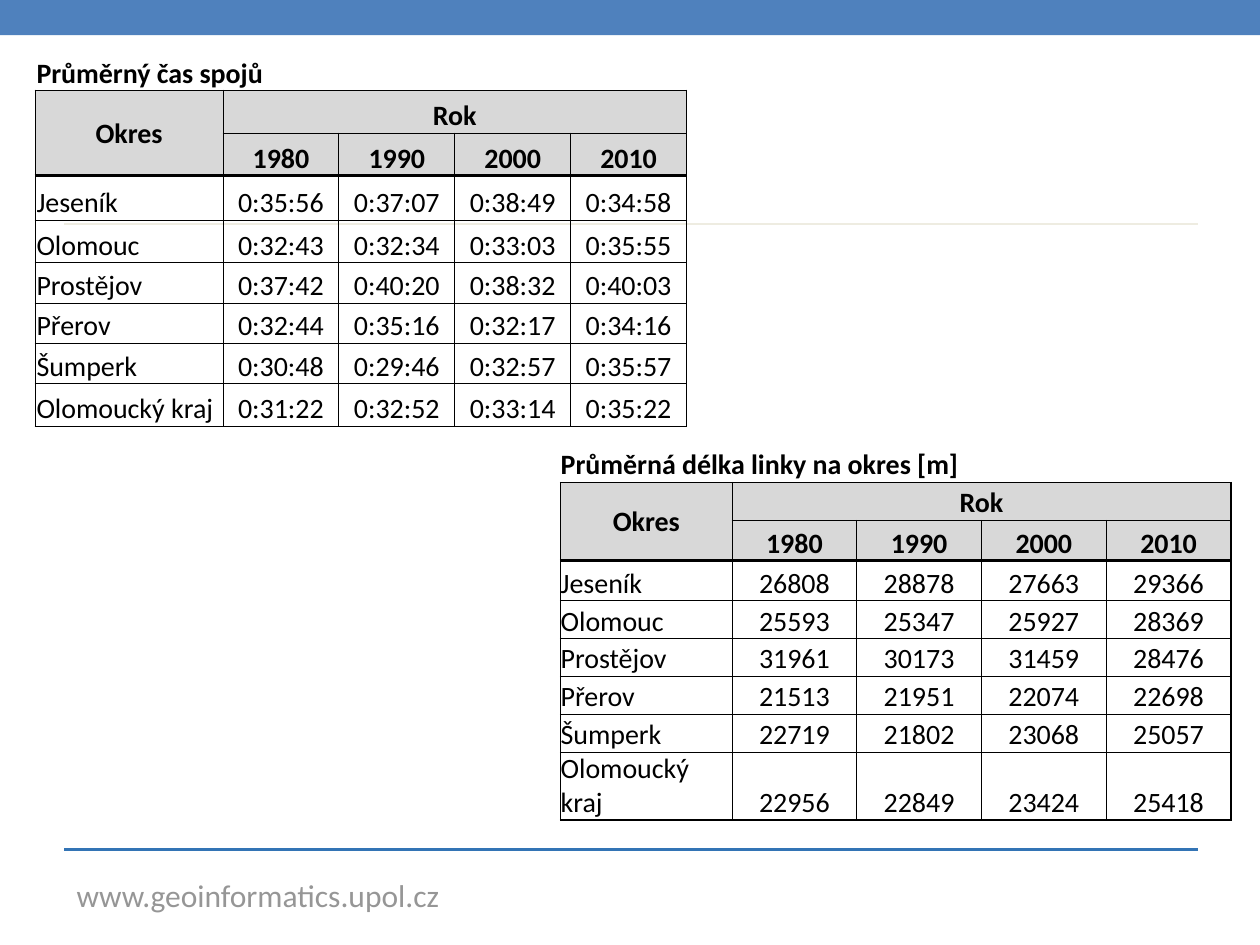
from lxml import etree
from pptx import Presentation
from pptx.dml.color import RGBColor
from pptx.enum import shapes, text
from pptx.oxml import ns
from pptx.util import Inches, Pt

BLACK = RGBColor(0x00, 0x00, 0x00)
HEAD = RGBColor(0xD8, 0xD8, 0xD8)
BAND = RGBColor(0x4F, 0x81, 0xBD)
RULE = RGBColor(0x33, 0x74, 0xB5)
PALE = RGBColor(0xEE, 0xEC, 0xE1)
GREY = RGBColor(0x96, 0x96, 0x96)
FONT = "Calibri"
SIZE = 16

FOOTER = "www.geoinformatics.upol.cz"
HEADER = [
    ["Okres", "Rok", "", "", ""],
    ["", "1980", "1990", "2000", "2010"],
]
TABLES = [
    {
        "title": "Průměrný čas spojů",
        "title_span": 2,
        "at": (0.28, 0.44),
        "cols": [1.49] + [0.92] * 4,
        "rows": [0.27, 0.34, 0.34, 0.35, 0.34, 0.32, 0.32, 0.32, 0.34],
        "inset": 0.01,
        "data": [
            ["Jeseník", "0:35:56", "0:37:07", "0:38:49", "0:34:58"],
            ["Olomouc", "0:32:43", "0:32:34", "0:33:03", "0:35:55"],
            ["Prostějov", "0:37:42", "0:40:20", "0:38:32", "0:40:03"],
            ["Přerov", "0:32:44", "0:35:16", "0:32:17", "0:34:16"],
            ["Šumperk", "0:30:48", "0:29:46", "0:32:57", "0:35:57"],
            ["Olomoucký kraj", "0:31:22", "0:32:52", "0:33:14", "0:35:22"],
        ],
    },
    {
        "title": "Průměrná délka linky na okres [m]",
        "title_span": 5,
        "at": (4.45, 3.51),
        "cols": [1.36] + [0.99] * 4,
        "rows": [0.32, 0.3, 0.32, 0.32, 0.3, 0.3, 0.3, 0.3, 0.54],
        "inset": 0,
        "data": [
            ["Jeseník", "26808", "28878", "27663", "29366"],
            ["Olomouc", "25593", "25347", "25927", "28369"],
            ["Prostějov", "31961", "30173", "31459", "28476"],
            ["Přerov", "21513", "21951", "22074", "22698"],
            ["Šumperk", "22719", "21802", "23068", "25057"],
            ["Olomoucký kraj", "22956", "22849", "23424", "25418"],
        ],
    },
]


def add_rule(s, y, color, width):
    ln = s.shapes.add_connector(shapes.MSO_CONNECTOR.STRAIGHT,
                                Inches(0.51), Inches(y), Inches(9.51), Inches(y))
    ln.line.color.rgb = color
    ln.line.width = Pt(width)
    etree.SubElement(ln._element.spPr, ns.qn("a:effectLst"))


def set_borders(cell, widths):
    tc_pr = cell._tc.get_or_add_tcPr()
    for side, width in zip("LRTB", widths):
        ln = etree.SubElement(tc_pr, ns.qn(f"a:ln{side}"))
        if width:
            ln.set("w", str(Pt(width)))
            fill = etree.SubElement(ln, ns.qn("a:solidFill"))
            etree.SubElement(fill, ns.qn("a:srgbClr"), val=str(BLACK))
        else:
            etree.SubElement(ln, ns.qn("a:noFill"))


def fill_cell(cell, value, r, c, inset):
    cell.margin_left = cell.margin_right = cell.margin_top = Inches(inset)
    cell.margin_bottom = 0
    okres = r == 1 and c == 0
    cell.vertical_anchor = text.MSO_ANCHOR.MIDDLE if okres else text.MSO_ANCHOR.BOTTOM
    p = cell.text_frame.paragraphs[0]
    p.text = value
    if r in (1, 2) or (r > 2 and c > 0):
        p.alignment = text.PP_ALIGN.CENTER
    for run in p.runs:
        run.font.name = FONT
        run.font.size = Pt(SIZE)
        run.font.bold = r < 3
        run.font.color.rgb = BLACK
    if not value:
        etree.SubElement(p._p, ns.qn("a:endParaRPr"), sz=str(SIZE * 100))


def add_data_table(s, spec_):
    cols, rows = spec_["cols"], spec_["rows"]
    n_rows, n_cols = len(rows), len(cols)
    x, y = spec_["at"]
    tbl = s.shapes.add_table(n_rows, n_cols, Inches(x), Inches(y),
                             Inches(sum(cols)), Inches(sum(rows))).table
    tbl.first_row = tbl.horz_banding = False
    for col, width in zip(tbl.columns, cols):
        col.width = Inches(width)
    for row, height in zip(tbl.rows, rows):
        row.height = Inches(height)

    tbl.cell(0, 0).merge(tbl.cell(0, spec_["title_span"] - 1))
    tbl.cell(1, 0).merge(tbl.cell(2, 0))
    tbl.cell(1, 1).merge(tbl.cell(1, n_cols - 1))

    h_lines = {0: None, 1: 1, 3: 2, n_rows: 1}
    v_lines = {0: 1, n_cols: 1}
    grid = [[spec_["title"]] + [""] * (n_cols - 1)] + HEADER + spec_["data"]
    for r, values in enumerate(grid):
        for c, value in enumerate(values):
            cell = tbl.cell(r, c)
            fill_cell(cell, value, r, c, spec_["inset"])
            right = c + cell.span_width if cell.is_merge_origin else c + 1
            bottom = r + cell.span_height if cell.is_merge_origin else r + 1
            left_w, right_w = (v_lines.get(i, 0.5) if r else None for i in (c, right))
            set_borders(cell, (left_w, right_w,
                               h_lines.get(r, 0.5), h_lines.get(bottom, 0.5)))
            if r in (1, 2):
                cell.fill.solid()
                cell.fill.fore_color.rgb = HEAD
            else:
                cell.fill.background()


def main():
    prs = Presentation()
    prs.slide_width, prs.slide_height = Inches(10), Inches(7.5)
    s = prs.slides.add_slide(prs.slide_layouts[6])

    tf = s.shapes.add_textbox(Inches(0.51), Inches(6.9), Inches(3.11), Inches(0.4)).text_frame
    tf.word_wrap = False
    tf.auto_size = text.MSO_AUTO_SIZE.SHAPE_TO_FIT_TEXT
    tf.text = FOOTER
    font = tf.paragraphs[0].runs[0].font
    font.name, font.size = FONT, Pt(18)
    font.color.rgb = GREY

    add_rule(s, 6.74, RULE, 1.5)
    band = s.shapes.add_shape(shapes.MSO_SHAPE.RECTANGLE, 0, 0, prs.slide_width, Inches(0.28))
    band.shadow.inherit = False
    band.fill.solid()
    band.fill.fore_color.rgb = BAND
    band.line.fill.background()
    add_rule(s, 1.78, PALE, 1)

    for table in TABLES:
        add_data_table(s, table)
    prs.save("out.pptx")


if __name__ == "__main__":
    main()
